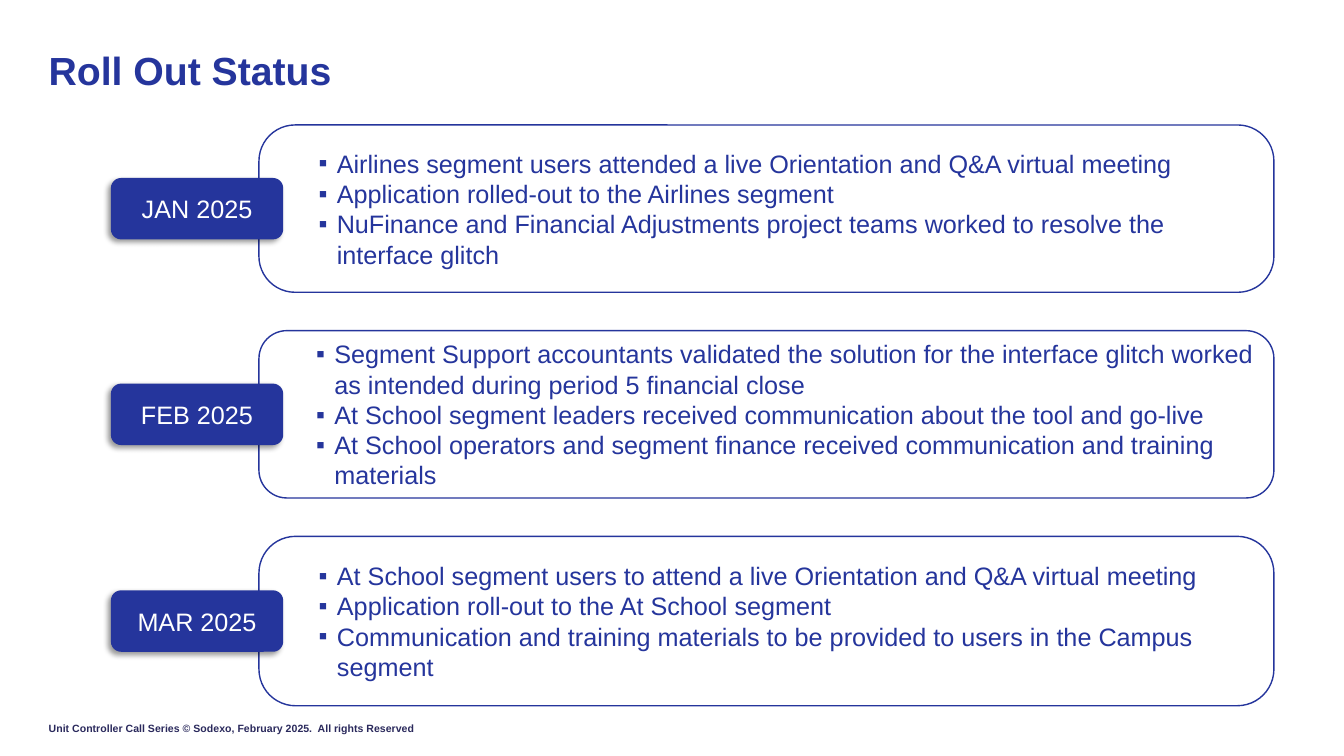
from lxml.etree import SubElement
from pptx import Presentation
from pptx.dml.color import RGBColor
from pptx.enum.shapes import MSO_SHAPE as Shape
from pptx.enum.text import MSO_ANCHOR as Anchor, PP_ALIGN as Align
from pptx.oxml.ns import qn
from pptx.util import Pt

TITLE = "Roll Out Status"
FOOTER = "Unit Controller Call Series © Sodexo, February 2025.  All rights Reserved"
MONTHS = [
    {"label": "JAN 2025", "height": 119.5, "corner": 0.216, "items": [
        "Airlines segment users attended a live Orientation and Q&A virtual meeting",
        "Application rolled-out to the Airlines segment",
        "NuFinance and Financial Adjustments project teams worked to resolve the interface glitch",
    ]},
    {"label": "FEB 2025", "height": 119.5, "corner": 0.1667, "items": [
        "Segment Support accountants validated the solution for the interface glitch worked as intended during period 5 financial close",
        "At School segment leaders received communication about the tool and go-live",
        "At School operators and segment finance received communication and training materials",
    ]},
    {"label": "MAR 2025", "height": 121, "corner": 0.216, "items": [
        "At School segment users to attend a live Orientation and Q&A virtual meeting",
        "Application roll-out to the At School segment",
        "Communication and training materials to be provided to users in the Campus segment",
    ]},
]

THEME = {
    "font": "Arial",
    "blue": RGBColor.from_string("25359C"),
    "navy": RGBColor.from_string("2A295C"),
    "white": RGBColor.from_string("FFFFFF"),
    "shadow": "000000",
    "title": 28, "body": 18, "footer": 7.5,
}

SLIDE_WIDTH, SLIDE_HEIGHT = 960, 540
PANEL_LEFT, PANEL_WIDTH = 185, 725
FIRST_TOP, PITCH = 89.3, 146.9
BADGE_LEFT, BADGE_WIDTH, BADGE_HEIGHT = 79.2, 123.1, 43.9
MARGIN_LEFT = 34.8
BULLET_INDENT, BULLET_HANG = 41, 13


def set_values(target, values):
    for name, value in values.items():
        setattr(target, name, value)


def write(paragraph, text, size, color, bold=False):
    run = paragraph.add_run()
    run.text = text
    set_values(run.font, {"name": THEME["font"], "size": Pt(THEME[size]), "bold": bold})
    run.font.color.rgb = THEME[color]


def add_line_of_text(slide, text, box, size, color):
    shape = slide.shapes.add_textbox(*map(Pt, box))
    set_values(shape.text_frame, {
        "word_wrap": True, "vertical_anchor": Anchor.MIDDLE,
        "margin_left": 0, "margin_right": 0, "margin_top": 0, "margin_bottom": 0})
    paragraph = shape.text_frame.paragraphs[0]
    write(paragraph, text, size, color, True)
    return paragraph


def add_rounded(slide, box, corner=0.1667):
    shape = slide.shapes.add_shape(Shape.ROUNDED_RECTANGLE, *map(Pt, box))
    shape.adjustments[0] = corner
    shape.shadow.inherit = False
    set_values(shape.text_frame, {"word_wrap": True, "vertical_anchor": Anchor.MIDDLE})
    return shape


def add_shadow(shape):
    effects = shape._element.spPr.find(qn("a:effectLst"))
    outer = SubElement(effects, qn("a:outerShdw"), blurRad=str(Pt(4)), dist=str(Pt(3)),
                       dir=str(135 * 60000), algn="tr", rotWithShape="0")
    color = SubElement(outer, qn("a:srgbClr"), val=THEME["shadow"])
    SubElement(color, qn("a:alpha"), val="40000")


def add_bullet(paragraph):
    properties = paragraph._p.get_or_add_pPr()
    properties.set("marL", str(Pt(BULLET_INDENT)))
    properties.set("indent", str(-Pt(BULLET_HANG)))
    SubElement(properties, qn("a:buFont"), typeface=THEME["font"])
    SubElement(properties, qn("a:buChar"), char="▪")


def add_panel(slide, month, top):
    panel = add_rounded(slide, (PANEL_LEFT, top, PANEL_WIDTH, month["height"]), month["corner"])
    panel.fill.background()
    panel.line.color.rgb = THEME["blue"]
    panel.line.width = Pt(1)
    frame = panel.text_frame
    for index, item in enumerate(month["items"]):
        paragraph = frame.add_paragraph() if index else frame.paragraphs[0]
        paragraph.alignment = Align.LEFT
        add_bullet(paragraph)
        write(paragraph, item, "body", "blue")


def add_badge(slide, month, top):
    badge_top = top + (month["height"] - BADGE_HEIGHT) / 2
    badge = add_rounded(slide, (BADGE_LEFT, badge_top, BADGE_WIDTH, BADGE_HEIGHT))
    badge.fill.solid()
    badge.fill.fore_color.rgb = THEME["blue"]
    badge.line.fill.background()
    add_shadow(badge)
    paragraph = badge.text_frame.paragraphs[0]
    paragraph.alignment = Align.CENTER
    write(paragraph, month["label"], "body", "white")


def main():
    presentation = Presentation()
    set_values(presentation, {"slide_width": Pt(SLIDE_WIDTH), "slide_height": Pt(SLIDE_HEIGHT)})
    slide = presentation.slides.add_slide(presentation.slide_layouts[6])
    title = add_line_of_text(slide, TITLE, (MARGIN_LEFT, 36.7, 828, 30.2), "title", "blue")
    title.line_spacing = 0.9
    for index, month in enumerate(MONTHS):
        top = FIRST_TOP + index * PITCH
        add_panel(slide, month, top)
        add_badge(slide, month, top)
    add_line_of_text(slide, FOOTER, (MARGIN_LEFT, 515.5, 324, 9.4), "footer", "navy")
    presentation.save("out.pptx")


if __name__ == "__main__":
    main()
